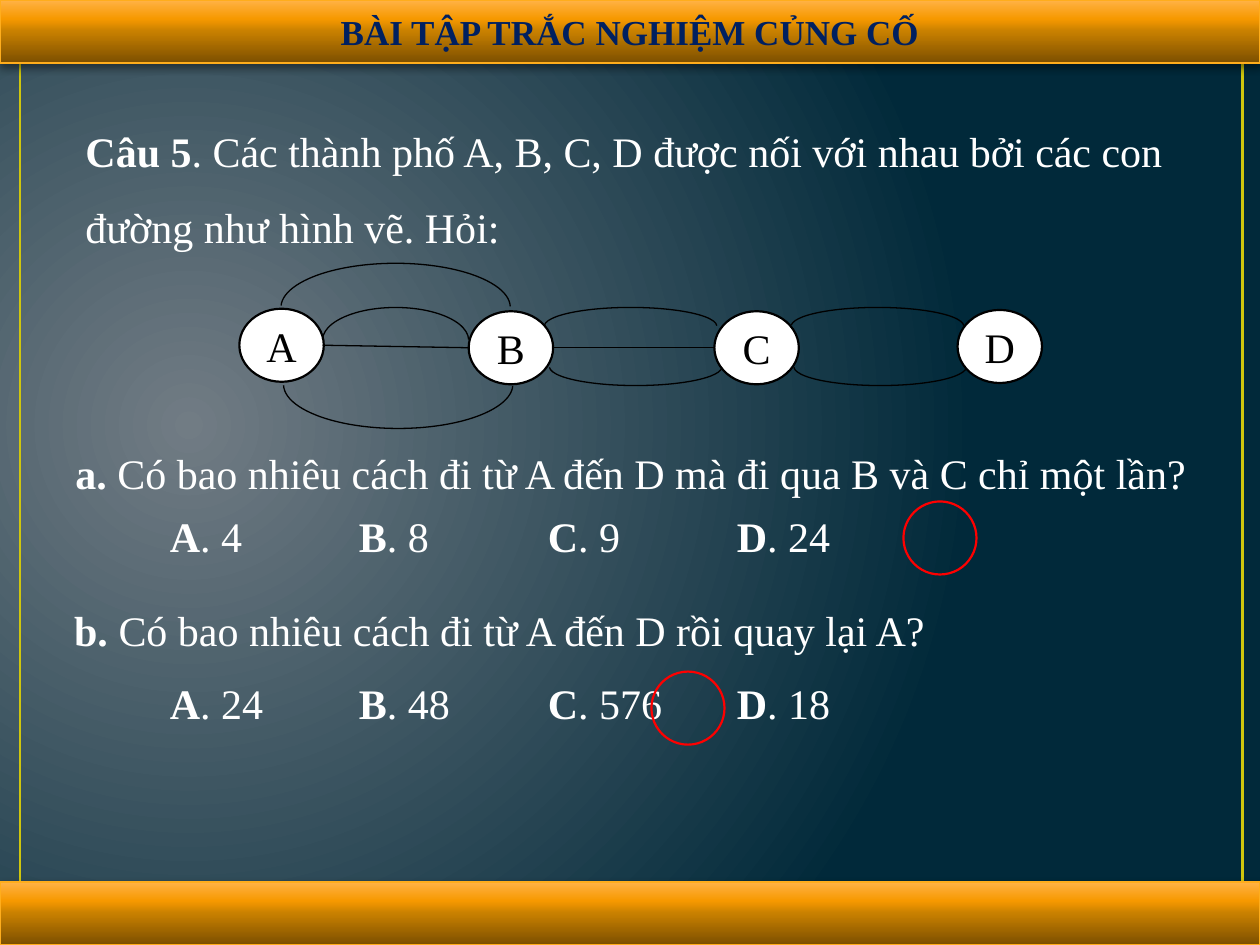
import pptx
import pptx.util
import pptx.dml.color
import pptx.enum.shapes
import pptx.enum.text
import pptx.oxml
import pptx.oxml.ns

Inches = pptx.util.Inches
Pt = pptx.util.Pt
RGBColor = pptx.dml.color.RGBColor
MSO_SHAPE = pptx.enum.shapes.MSO_SHAPE
MIDDLE = pptx.enum.text.MSO_ANCHOR.MIDDLE
CENTER = pptx.enum.text.PP_ALIGN.CENTER
A_NS = pptx.oxml.ns.nsdecls("a")

WHITE = RGBColor(0xFF, 0xFF, 0xFF)
BLACK = RGBColor(0, 0, 0)
RED = RGBColor(0xFF, 0, 0)
NAVY = RGBColor(0x00, 0x20, 0x60)
OLIVE = RGBColor(0xCF, 0xC6, 0x0D)
AMBER = RGBColor(0xFF, 0xAD, 0x1C)
BACKGROUND_STOPS = [(0, RGBColor(0x71, 0x7C, 0x84)), (100, RGBColor(0x01, 0x29, 0x3A))]
BAR_STOPS = [
    (0, RGBColor(0x7C, 0x4F, 0x00)),
    (50, RGBColor(0xC8, 0x80, 0x00)),
    (70, RGBColor(0xF7, 0x99, 0x00)),
    (100, RGBColor(0xFF, 0xB2, 0x46)),
]


def write(sp, runs, size=24, color=WHITE, align=None, anchor=None, spacing=None):
    """Fill a shape with one paragraph; runs are (text, bold) pairs."""
    tf = sp.text_frame
    tf.word_wrap = True
    if anchor is not None:
        tf.vertical_anchor = anchor
    p = tf.paragraphs[0]
    p.alignment = align
    p.line_spacing = spacing
    for text, bold in runs:
        r = p.add_run()
        r.text = text
        r.font.name = "Times New Roman"
        r.font.size = Pt(size)
        r.font.bold = bold
        r.font.color.rgb = color


def set_gradient(fill, element, stops, direction):
    """Give fill, found inside element, the stops and the a:lin or a:path direction."""
    fill.gradient()
    grad = next(element.iter(pptx.oxml.ns.qn("a:gradFill")))
    for child in list(grad):
        grad.remove(child)
    marks = "".join(
        f'<a:gs pos="{pos * 1000}"><a:srgbClr val="{color}"/></a:gs>' for pos, color in stops
    )
    grad.append(pptx.oxml.parse_xml(f"<a:gsLst {A_NS}>{marks}</a:gsLst>"))
    grad.append(pptx.oxml.parse_xml(direction))


prs = pptx.Presentation()
prs.slide_width = Inches(10)
prs.slide_height = Inches(7.5)
s = prs.slides.add_slide(prs.slide_layouts[6])
shapes = s.shapes

set_gradient(
    s.background.fill, s.background._cSld, BACKGROUND_STOPS,
    f'<a:path {A_NS} path="circle"><a:fillToRect l="15000" t="50000" r="85000" b="60000"/></a:path>',
)

# Frame and bars
frame = shapes.add_shape(MSO_SHAPE.RECTANGLE, Inches(0.16), Inches(0.15), Inches(9.7), Inches(7.2))
frame.shadow.inherit = False
frame.fill.background()
frame.line.color.rgb = OLIVE
frame.line.width = Pt(1.5)

for top, title in [(0, "BÀI TẬP TRẮC NGHIỆM CỦNG CỐ"), (7, None)]:
    bar = shapes.add_shape(MSO_SHAPE.RECTANGLE, 0, Inches(top), Inches(10), Inches(0.5))
    set_gradient(bar.fill, bar._element.spPr, BAR_STOPS,
                 f'<a:lin {A_NS} ang="16200000" scaled="0"/>')
    bar.line.color.rgb = AMBER
    bar.line.width = Pt(0.75)
    bar._element.spPr.append(pptx.oxml.parse_xml(
        f'<a:effectLst {A_NS}><a:outerShdw blurRad="{Pt(5)}" dist="{Pt(2)}" dir="5400000" '
        'rotWithShape="0"><a:srgbClr val="000000"><a:alpha val="43000"/></a:srgbClr>'
        '</a:outerShdw></a:effectLst>'))
    if title:
        write(bar, [(title, True)], size=20, color=NAVY, align=CENTER, anchor=MIDDLE)

# Questions and answers
texts = [
    (0.58, 0.75, 9, 1.31, 1.5, [
        ("Câu 5", True),
        (". Các thành phố A, B, C, D được nối với nhau bởi các con đường như hình vẽ. Hỏi:", False),
    ]),
    (0.5, 3.5, 9.08, 0.5, None, [
        ("a. ", True),
        ("Có bao nhiêu cách đi từ A đến D mà đi qua B và C chỉ một lần?", False),
    ]),
    (0.49, 4.75, 9.08, 0.5, None, [
        ("b. ", True),
        ("Có bao nhiêu cách đi từ A đến D rồi quay lại A?", False),
    ]),
]
for top, answers in [(4, (4, 8, 9, 24)), (5.33, (24, 48, 576, 18))]:
    runs = []
    for letter, answer in zip("ABCD", answers):
        gap = "" if letter == "D" else "\t\t"
        runs += [(letter, True), (f". {answer}{gap}", False)]
    texts.append((1.25, top, 7.25, 0.5, None, runs))

for left, top, width, height, spacing, runs in texts:
    box = shapes.add_textbox(Inches(left), Inches(top), Inches(width), Inches(height))
    box.text_frame.auto_size = pptx.enum.text.MSO_AUTO_SIZE.SHAPE_TO_FIT_TEXT
    write(box, runs, spacing=spacing)

for left, top in [(7.17, 3.98), (5.17, 5.33)]:
    ring = shapes.add_shape(MSO_SHAPE.OVAL, Inches(left), Inches(top), Inches(0.58), Inches(0.58))
    ring.shadow.inherit = False
    ring.fill.background()
    ring.line.color.rgb = RED
    ring.line.width = Pt(1.25)

# Cities
for name, left, top in [("A", 1.9, 2.45), ("B", 3.72, 2.47), ("C", 5.67, 2.47), ("D", 7.6, 2.46)]:
    city = shapes.add_shape(MSO_SHAPE.OVAL, Inches(left), Inches(top), Inches(0.67), Inches(0.58))
    city.shadow.inherit = False
    city.fill.solid()
    city.fill.fore_color.rgb = WHITE
    city.line.color.rgb = BLACK
    city.line.width = Pt(1.25)
    write(city, [(name, False)], color=BLACK, align=CENTER, anchor=MIDDLE)

# Curved roads: left, top, width, height, rotation
curves = [
    (2.23, 2.09, 1.82, 0.7, 0),
    (2.56, 2.44, 1.16, 0.52, 0),
    (2.25, 2.7, 1.82, 0.7, 180),
    (4.32, 2.44, 1.37, 0.3, 0),
    (4.36, 2.76, 1.37, 0.3, 180),
    (6.28, 2.44, 1.37, 0.3, 0),
    (6.3, 2.76, 1.37, 0.3, 180),
]
for left, top, width, height, rotation in curves:
    road = shapes.add_shape(MSO_SHAPE.ARC, Inches(left), Inches(top), Inches(width), Inches(height))
    road.shadow.inherit = False
    road.adjustments[0] = 108.57
    road.adjustments[1] = 215.72
    road.rotation = rotation
    road.fill.background()
    road.line.color.rgb = BLACK
    road.line.width = Pt(0.75)

# Straight roads
for x1, y1, x2, y2 in [(2.56, 2.74, 3.72, 2.76), (4.39, 2.76, 5.67, 2.76)]:
    road = shapes.add_connector(pptx.enum.shapes.MSO_CONNECTOR.STRAIGHT,
                                Inches(x1), Inches(y1), Inches(x2), Inches(y2))
    road.line.color.rgb = BLACK
    road.line.width = Pt(0.75)
    road._element.spPr.append(pptx.oxml.parse_xml(f"<a:effectLst {A_NS}/>"))

prs.save("out.pptx")
